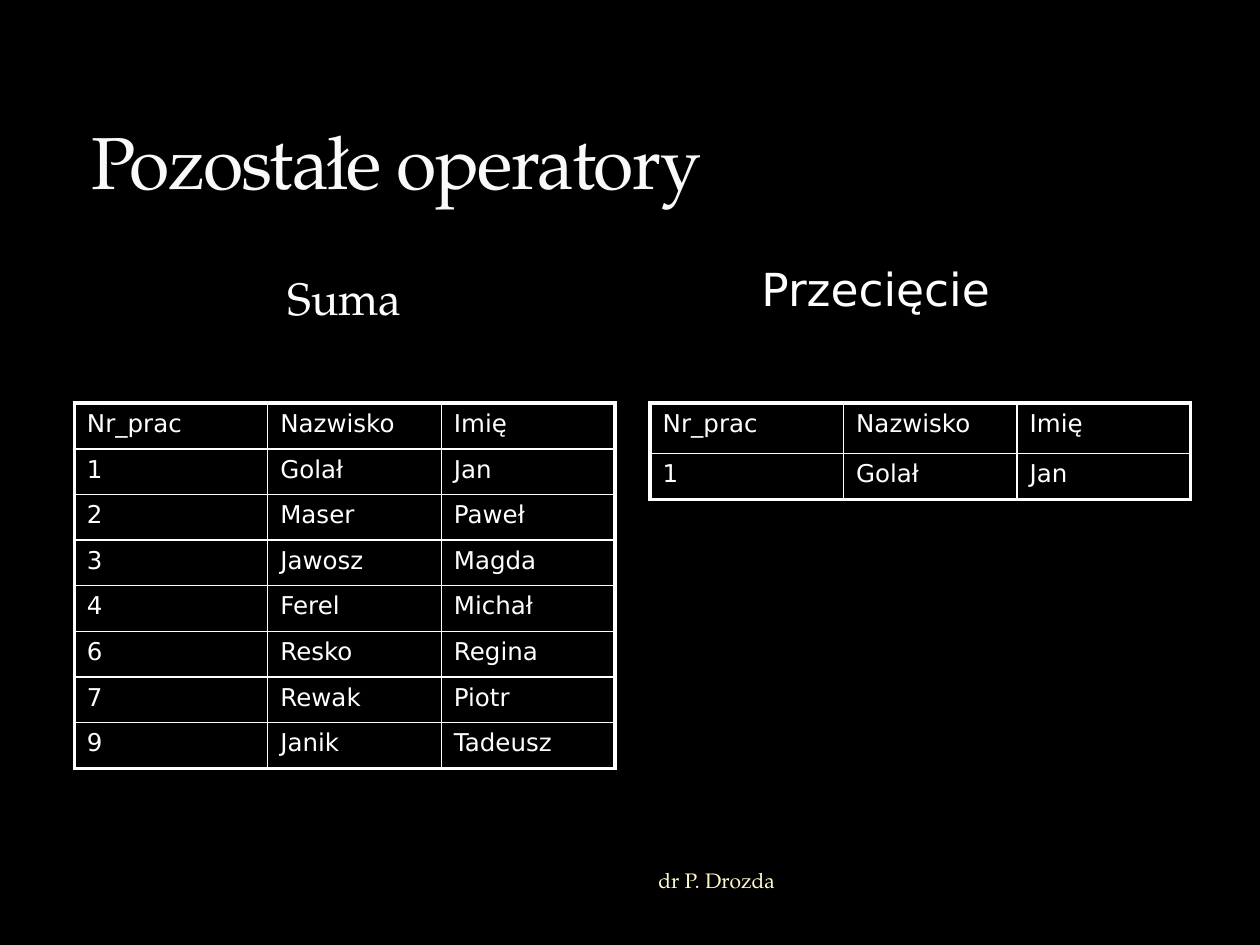
from dataclasses import dataclass

import pptx
import pptx.dml.color
import pptx.enum.text
import pptx.oxml.ns
import pptx.util
from lxml import etree

Pt = pptx.util.Pt
RGBColor = pptx.dml.color.RGBColor
Align = pptx.enum.text.PP_ALIGN
Anchor = pptx.enum.text.MSO_ANCHOR
qn = pptx.oxml.ns.qn


@dataclass(frozen=True)
class Theme:
    background: str = "000000"
    title: str = "F9F9F9"
    text: str = "FFFFFF"
    footer: str = "FEFAC9"
    serif: str = "TeX Gyre Pagella"
    sans: str = "DejaVu Sans"
    title_size: float = 42
    heading_size: float = 26
    cell_size: float = 14
    footer_size: float = 12
    outer_line: float = 2.25
    inner_line: float = 1


THEME = Theme()
COLUMN_WIDTHS = (110.5, 99.2, 99.2)
HEADER = ("Nr_prac", "Nazwisko", "Imię")
UNION_ROWS = (
    HEADER,
    ("1", "Golał", "Jan"),
    ("2", "Maser", "Paweł"),
    ("3", "Jawosz", "Magda"),
    ("4", "Ferel", "Michał"),
    ("6", "Resko", "Regina"),
    ("7", "Rewak", "Piotr"),
    ("9", "Janik", "Tadeusz"),
)
INTERSECTION_ROWS = UNION_ROWS[:2]


def style_paragraph(paragraph, font_name, size, color):
    paragraph.font.name = font_name
    paragraph.font.size = Pt(size)
    paragraph.font.color.rgb = RGBColor.from_string(color)


def add_text(slide, box, text, font_name, size, color,
             align=Align.LEFT, anchor=Anchor.TOP):
    shape = slide.shapes.add_textbox(*map(Pt, box))
    frame = shape.text_frame
    frame.word_wrap = True
    frame.vertical_anchor = anchor
    paragraph = frame.paragraphs[0]
    paragraph.text = text
    paragraph.alignment = align
    style_paragraph(paragraph, font_name, size, color)
    return paragraph


def add_title(slide, box, text):
    paragraph = add_text(slide, box, text, THEME.serif, THEME.title_size,
                         THEME.title, anchor=Anchor.BOTTOM)
    # Tighten the letters by one point
    paragraph.runs[0].font._element.set("spc", "-100")


def set_borders(cell, widths):
    properties = cell._tc.get_or_add_tcPr()
    for position, (side, width) in enumerate(widths.items()):
        line = etree.Element(qn(f"a:{side}"), w=str(Pt(width)))
        fill = etree.SubElement(line, qn("a:solidFill"))
        etree.SubElement(fill, qn("a:srgbClr"), val=THEME.text)
        properties.insert(position, line)


def add_data_table(slide, left, top, rows, row_heights):
    frame = slide.shapes.add_table(
        len(rows), len(COLUMN_WIDTHS), Pt(left), Pt(top),
        Pt(sum(COLUMN_WIDTHS)), Pt(sum(row_heights)))
    table = frame.table
    table.first_row = table.horz_banding = False
    for column, width in zip(table.columns, COLUMN_WIDTHS):
        column.width = Pt(width)
    last_row, last_column = len(rows) - 1, len(COLUMN_WIDTHS) - 1
    for i, (values, height) in enumerate(zip(rows, row_heights)):
        table.rows[i].height = Pt(height)
        for j, value in enumerate(values):
            cell = table.cell(i, j)
            cell.text = value
            cell.fill.background()
            style_paragraph(cell.text_frame.paragraphs[0], THEME.sans,
                            THEME.cell_size, THEME.text)
            on_edge = {"lnL": j == 0, "lnR": j == last_column,
                       "lnT": i == 0, "lnB": i == last_row}
            set_borders(cell, {
                side: THEME.outer_line if edge else THEME.inner_line
                for side, edge in on_edge.items()})


def build_slide(presentation):
    slide = presentation.slides.add_slide(presentation.slide_layouts[6])
    slide.background.fill.solid()
    slide.background.fill.fore_color.rgb = RGBColor.from_string(THEME.background)

    # Footer and title
    add_text(slide, (168, 488, 282, 30), "dr P. Drozda", THEME.serif,
             THEME.footer_size, THEME.footer, Align.RIGHT, Anchor.MIDDLE)
    add_title(slide, (45, 24, 630, 96), "Pozostałe operatory")

    # Union on the left
    add_text(slide, (42.5, 151, 309, 41), "Suma", THEME.serif,
             THEME.heading_size, THEME.text, Align.CENTER)
    add_data_table(slide, 42.5, 230.4, UNION_ROWS, [26.1] * len(UNION_ROWS))

    # Intersection on the right
    add_data_table(slide, 371.5, 230.4, INTERSECTION_ROWS, [28.8, 26.4])
    add_text(slide, (428, 145.5, 153.5, 38), "Przecięcie", THEME.sans,
             THEME.heading_size, THEME.text)


def main():
    presentation = pptx.Presentation()
    presentation.slide_width = Pt(720)
    presentation.slide_height = Pt(540)
    build_slide(presentation)
    presentation.save("out.pptx")


if __name__ == "__main__":
    main()
